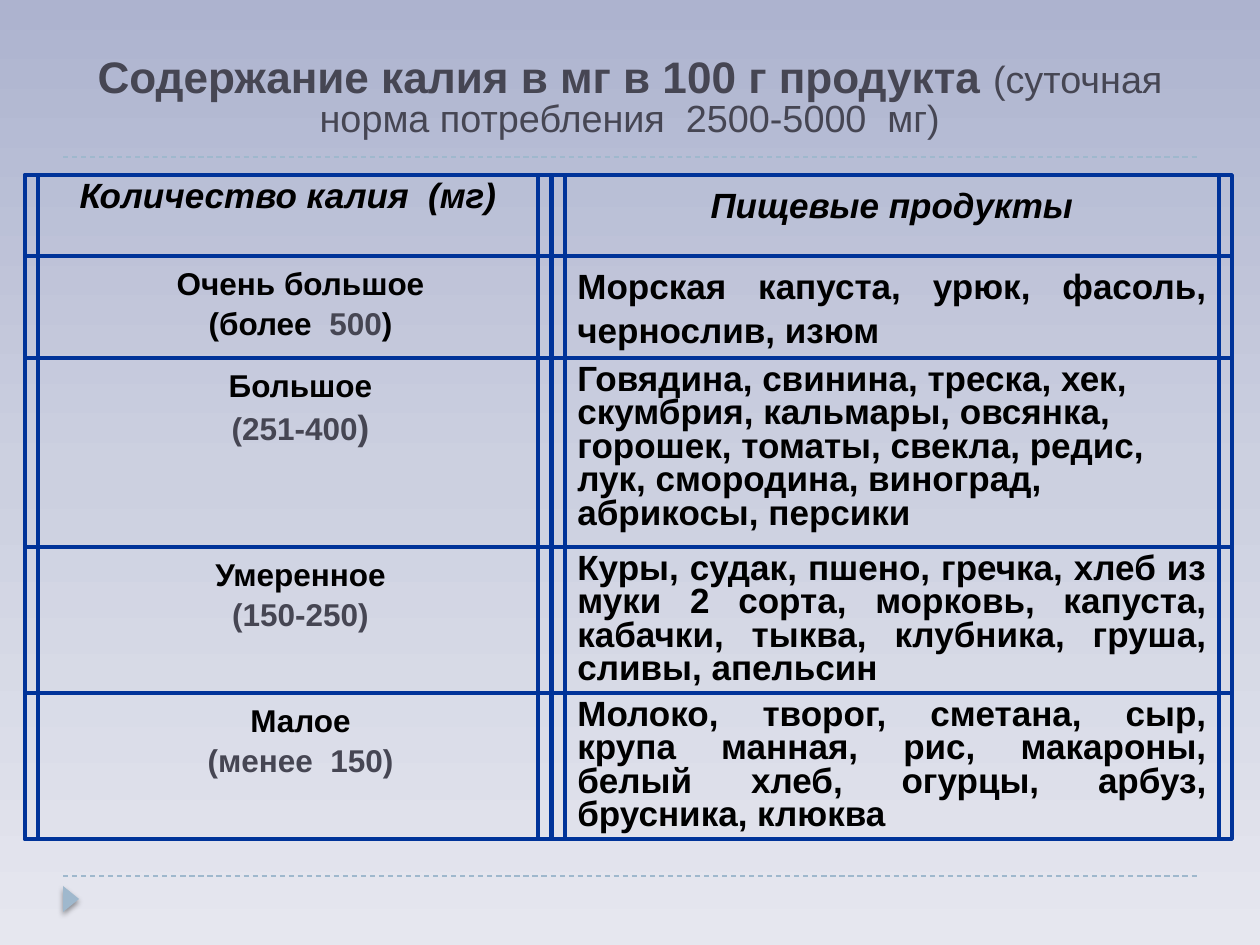
"""Builds the slide on potassium content in foods, with a framed grid of cells."""
from copy import deepcopy
from dataclasses import dataclass

from lxml import etree
from pptx import Presentation
from pptx import util as u
from pptx.dml.color import RGBColor
from pptx.enum import dml, shapes, text
from pptx.oxml.ns import qn

COLORS = {
    "frame": "003399",
    "accent": "9FB8CD",
    "grey": "464653",
    "black": "000000",
    "bg_top": "ADB3CF",
    "bg_middle": "CCD0E0",
    "bg_bottom": "E6E7EF",
}
FONT = "Arial"
PX_PER_INCH = 126
INSET = 13
FIRST_LINE = 25
ROW_EDGES = [175, 256, 358, 547, 693, 839]
COLUMNS = [(25, 526), (552, 680)]
CENTER = text.PP_ALIGN.CENTER
JUSTIFY = text.PP_ALIGN.JUSTIFY
LEFT = text.PP_ALIGN.LEFT


@dataclass
class Run:
    text: str
    size: float = 20
    color: str = "black"
    bold: bool = True
    italic: bool = False


@dataclass
class Para:
    runs: list[Run]
    align: text.PP_ALIGN = CENTER
    spacing: float = 1.05
    indent: int = 0


def px(n: int) -> u.Emu:
    return u.Emu(round(n * 914400 / PX_PER_INCH))


def rgb(name: str) -> RGBColor:
    return RGBColor.from_string(COLORS[name])


def write(tf, paras: list[Para]) -> None:
    for i, para in enumerate(paras):
        p = tf.paragraphs[0] if i == 0 else tf.add_paragraph()
        p.alignment = para.align
        p.line_spacing = para.spacing
        if para.indent:
            pPr = p._p.get_or_add_pPr()
            pPr.set("marL", "0")
            pPr.set("indent", str(px(para.indent)))
        for run in para.runs:
            r = p.add_run()
            r.text = run.text
            r.font.name = FONT
            r.font.size = u.Pt(run.size)
            r.font.bold = run.bold
            r.font.italic = run.italic
            r.font.color.rgb = rgb(run.color)


def add_frame(group, x: int, y: int, w: int, h: int, paras: list[Para] | None = None) -> None:
    sp = group.shapes.add_shape(shapes.MSO_SHAPE.RECTANGLE, px(x), px(y), px(w), px(h))
    sp.shadow.inherit = False
    sp.fill.background()
    sp.line.color.rgb = rgb("frame")
    sp.line.width = u.Pt(2.25)
    if paras:
        sp.text_frame.word_wrap = True
        sp.text_frame.vertical_anchor = text.MSO_ANCHOR.TOP
        write(sp.text_frame, paras)


def add_rule(s, y: int) -> None:
    line = s.shapes.add_connector(shapes.MSO_CONNECTOR.STRAIGHT, px(63), px(y), px(1197), px(y))
    line.line.color.rgb = rgb("accent")
    line.line.width = u.Pt(0.75)
    line.line.dash_style = dml.MSO_LINE.DASH
    etree.SubElement(line._element.spPr, qn("a:effectLst"))


def add_marker(s) -> None:
    sp = s.shapes.add_shape(shapes.MSO_SHAPE.ISOSCELES_TRIANGLE, px(58), px(891), px(26), px(16))
    sp.rotation = 90
    sp.fill.solid()
    sp.fill.fore_color.rgb = rgb("accent")
    sp.line.fill.background()
    sp.shadow.inherit = False
    effects = sp._element.spPr.find(qn("a:effectLst"))
    shadow = etree.SubElement(effects, qn("a:outerShdw"), blurRad=str(u.Pt(3.1)),
                              dist=str(u.Pt(1.6)), dir="5400000", rotWithShape="0")
    color = etree.SubElement(shadow, qn("a:srgbClr"), val=COLORS["black"])
    etree.SubElement(color, qn("a:alpha"), val="38000")


def set_background(s) -> None:
    fill = s.background.fill
    fill.gradient()
    fill.gradient_angle = 270
    stops = s._element.find(".//" + qn("a:gsLst"))
    stops.insert(1, deepcopy(stops[0]))
    names = ("bg_top", "bg_middle", "bg_bottom")
    for stop, name, position in zip(fill.gradient_stops, names, (0, 0.5, 1)):
        stop.color.rgb = rgb(name)
        stop.position = position


def set_title(s) -> None:
    title = s.shapes.title
    title.left, title.top, title.width, title.height = px(42), px(53), px(1176), px(94)
    tf = title.text_frame
    tf.word_wrap = True
    tf.auto_size = text.MSO_AUTO_SIZE.NONE
    tf.vertical_anchor = text.MSO_ANCHOR.BOTTOM
    write(tf, [Para([
        Run("Содержание калия в мг в 100 г продукта ", 25.2, "grey"),
        Run("(суточная норма потребления  2500-5000  мг)", 21.6, "grey", False),
    ], spacing=0.85)])


def heading(label: str, spacing: float = 1.05) -> list[Para]:
    return [Para([Run(label, italic=True)], spacing=spacing)]


def level(name: str, *amount: Run) -> list[Para]:
    return [Para([Run(name, 18)], indent=FIRST_LINE), Para(list(amount), indent=FIRST_LINE)]


def foods(names: str, align: text.PP_ALIGN = JUSTIFY, spacing: float = 0.8) -> list[Para]:
    return [Para([Run(names)], align, spacing)]


ROWS = [
    (heading("Количество калия  (мг)", 0.8), heading("Пищевые продукты")),
    (level("Очень большое", Run("(более  ", 18), Run("500", 18, "grey"), Run(")", 18)),
     foods("Морская капуста, урюк, фасоль, чернослив, изюм ", spacing=1.05)),
    (level("Большое", Run("(251-400", 18, "grey"), Run(")", 20, "grey")),
     foods("Говядина, свинина, треска, хек, скумбрия, кальмары, овсянка, горошек, томаты, "
           "свекла, редис, лук, смородина, виноград, абрикосы, персики", LEFT)),
    (level("Умеренное", Run("(150-250)", 18, "grey")),
     foods("Куры, судак, пшено, гречка, хлеб из муки 2 сорта, морковь, капуста, кабачки, "
           "тыква, клубника, груша, сливы, апельсин")),
    (level("Малое", Run("(менее  150)", 18, "grey")),
     foods("Молоко, творог, сметана, сыр, крупа манная, рис, макароны, белый хлеб, огурцы, "
           "арбуз, брусника, клюква")),
]


def add_grid(s) -> None:
    group = s.shapes.add_group_shape()
    for top, bottom, cells in zip(ROW_EDGES, ROW_EDGES[1:], ROWS):
        for (x, w), paras in zip(COLUMNS, cells):
            add_frame(group, x + INSET, top, w - 2 * INSET, bottom - top, paras)
            add_frame(group, x, top, w, bottom - top)
    left, right = COLUMNS[0][0], sum(COLUMNS[-1])
    add_frame(group, left, ROW_EDGES[0], right - left, ROW_EDGES[-1] - ROW_EDGES[0])


def main() -> None:
    prs = Presentation()
    prs.slide_width, prs.slide_height = px(1260), px(945)
    s = prs.slides.add_slide(prs.slide_layouts[5])
    set_background(s)
    for y in (876, 157):
        add_rule(s, y)
    add_marker(s)
    set_title(s)
    add_grid(s)
    prs.save("out.pptx")


if __name__ == "__main__":
    main()
